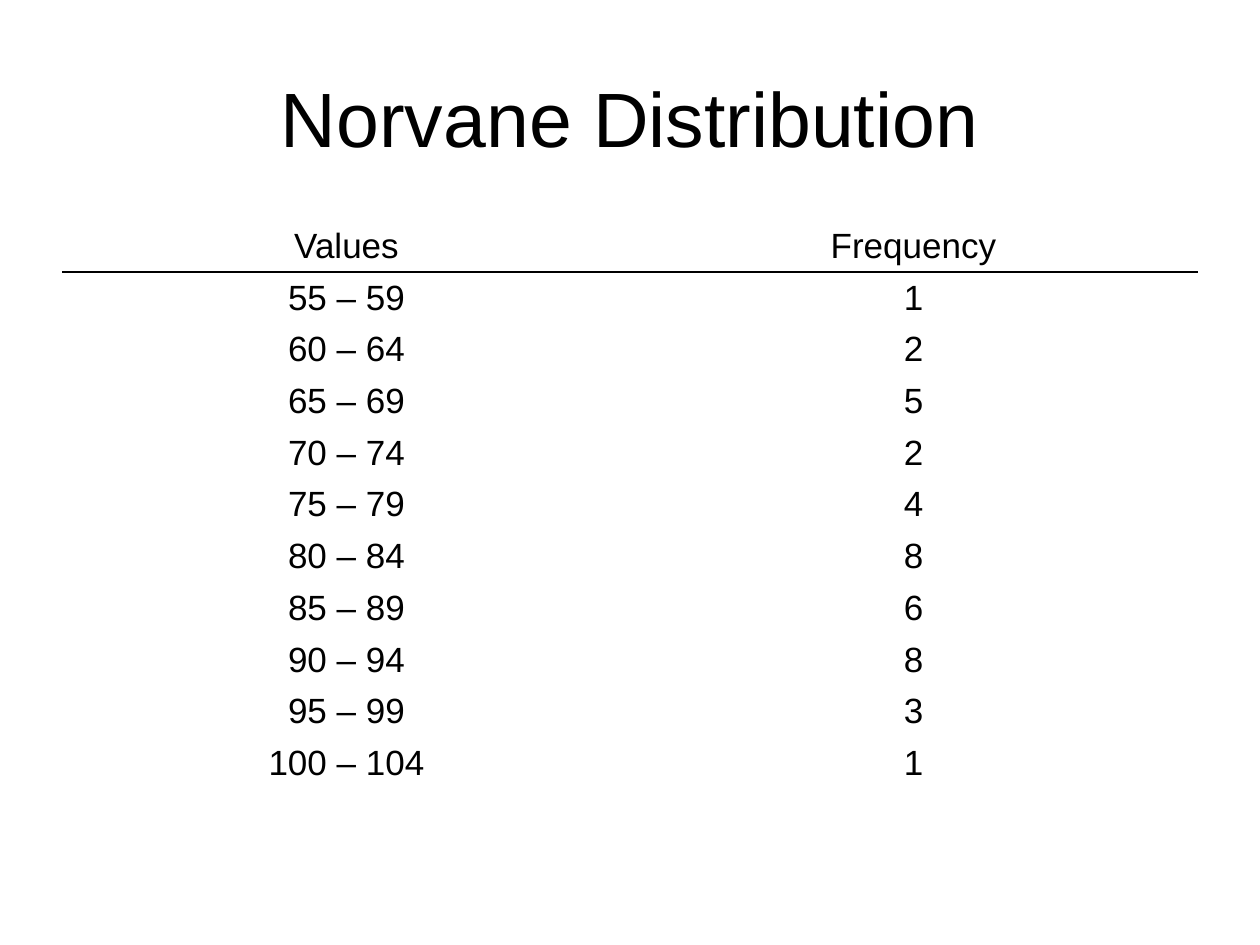
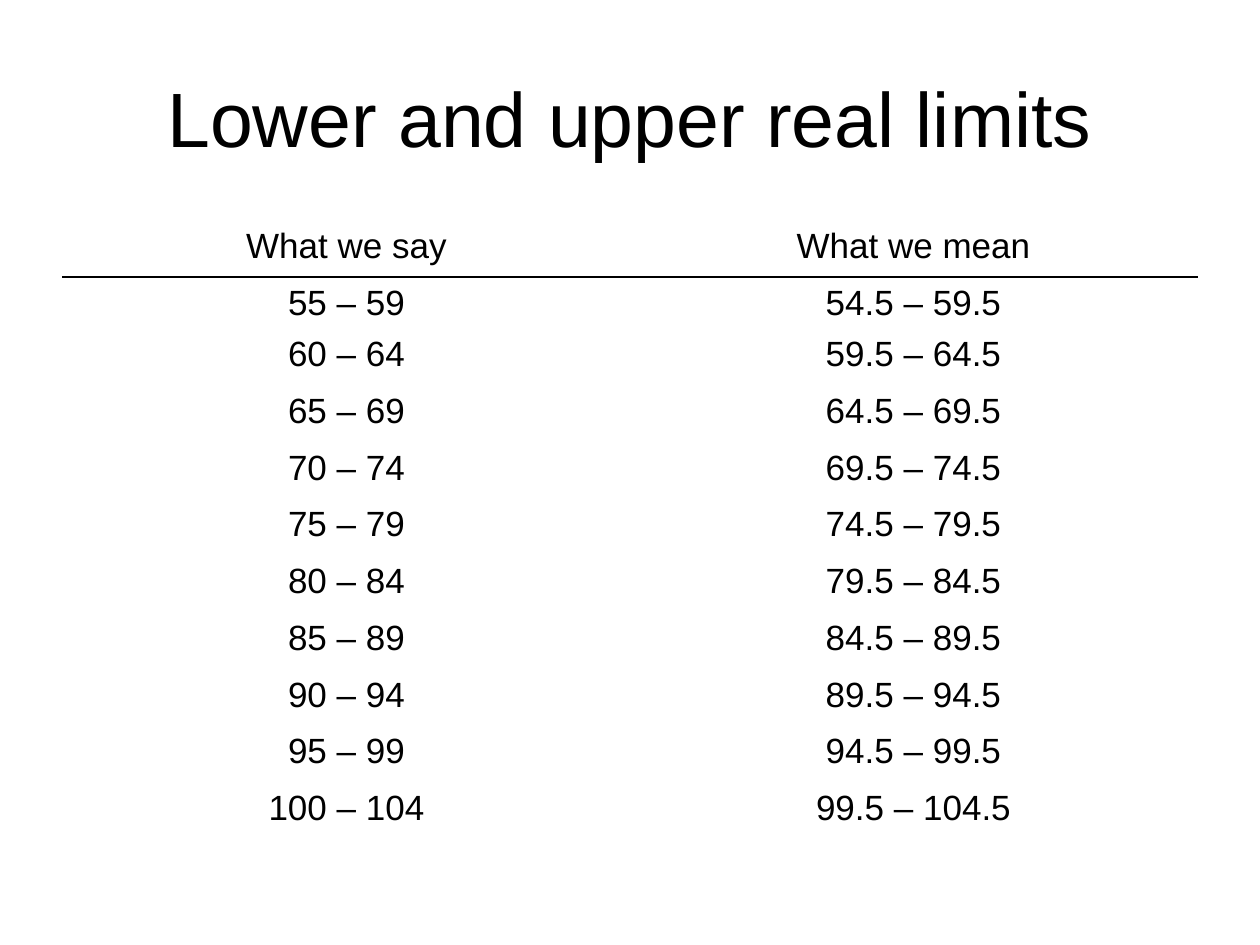
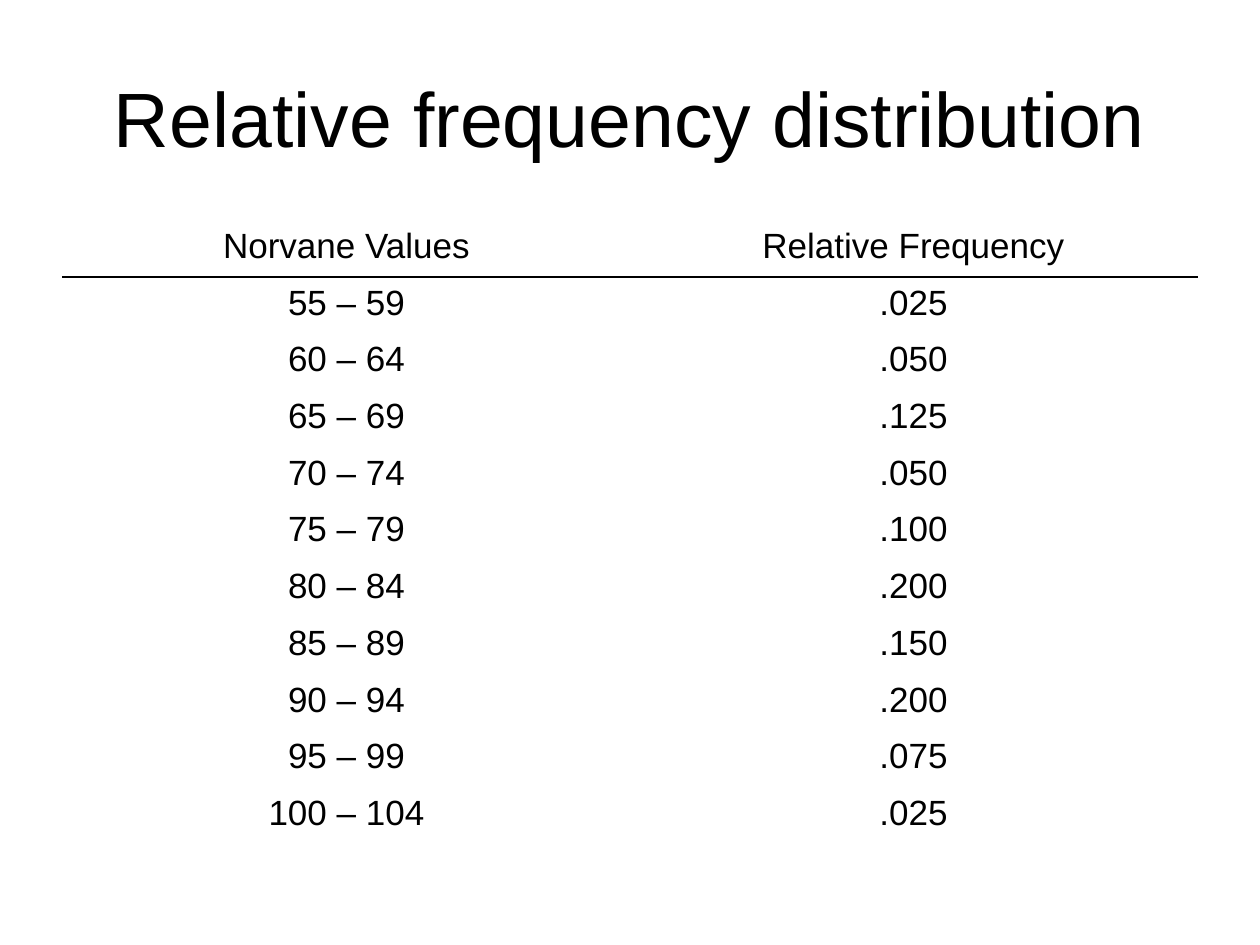
"""Build three slides of Norvane score distributions, each a title and a table."""
import pptx
import pptx.util
import pptx.dml.color
import pptx.enum.text
import pptx.oxml
import pptx.oxml.ns

Pt = pptx.util.Pt
BLACK = pptx.dml.color.RGBColor(0, 0, 0)
FONT = "Arial"
LEFT, WIDTH = 36, 648
TITLE_TOP, TITLE_HIGH = 21.6, 90
TABLE_TOP = 126
ROW, TALL, SHORT = 28.8, 32.4, 27.36
STEP = 5
LOWS = range(55, 105, STEP)
COUNTS = [1, 2, 5, 2, 4, 8, 6, 8, 3, 1]


def add_run(frame, text, size):
    """Write one centred run into the first paragraph of a text frame."""
    para = frame.paragraphs[0]
    para.alignment = pptx.enum.text.PP_ALIGN.CENTER
    run = para.add_run()
    run.text = text
    run.font.name = FONT
    run.font.size = Pt(size)
    run.font.bold = False
    run.font.color.rgb = BLACK


def add_title(slide, text):
    """Place and fill the title placeholder."""
    title = slide.shapes.title
    title.left, title.top = Pt(LEFT), Pt(TITLE_TOP)
    title.width, title.height = Pt(WIDTH), Pt(TITLE_HIGH)
    frame = title.text_frame
    frame.word_wrap = True
    frame.auto_size = pptx.enum.text.MSO_AUTO_SIZE.NONE
    frame.vertical_anchor = pptx.enum.text.MSO_ANCHOR.MIDDLE
    add_run(frame, text, 44)


def add_rule(cell, side):
    """Draw a black one-point border on one side of a cell."""
    line = pptx.oxml.parse_xml(
        f'<a:{side} {pptx.oxml.ns.nsdecls("a")} w="{Pt(1)}"><a:solidFill>'
        f'<a:srgbClr val="{BLACK}"/></a:solidFill></a:{side}>')
    cell._tc.get_or_add_tcPr().insert(0, line)


def add_grid(slide, rows, highs):
    """Add a plain two-column table with a rule under its header."""
    frame = slide.shapes.add_table(
        len(rows), 2, Pt(LEFT), Pt(TABLE_TOP), Pt(WIDTH), Pt(sum(highs)))
    table = frame.table
    table.first_row = table.horz_banding = False
    for r, (texts, high) in enumerate(zip(rows, highs)):
        table.rows[r].height = Pt(high)
        for c, text in enumerate(texts):
            cell = table.cell(r, c)
            cell.fill.background()
            add_run(cell.text_frame, text, 20)
            if r == 0:
                add_rule(cell, "lnB")
            elif r == 1:
                add_rule(cell, "lnT")


def main():
    """Build the deck and save it."""
    deck = pptx.Presentation()
    deck.slide_width, deck.slide_height = Pt(720), Pt(540)
    spans = [f"{low} – {low + STEP - 1}" for low in LOWS]
    limits = [f"{low - 0.5} – {low + STEP - 0.5}" for low in LOWS]
    shares = [f"{n / sum(COUNTS):.3f}".lstrip("0") for n in COUNTS]
    even = [TALL] * (len(spans) + 1)
    pages = [
        ("Norvane Distribution", ("Values", "Frequency"),
         map(str, COUNTS), [ROW] * len(even)),
        ("Lower and upper real limits", ("What we say", "What we mean"),
         limits, [TALL, SHORT] + even[2:]),
        ("Relative frequency distribution",
         ("Norvane Values", "Relative Frequency"), shares, even),
    ]
    for title, head, values, highs in pages:
        slide = deck.slides.add_slide(deck.slide_layouts[5])
        add_title(slide, title)
        add_grid(slide, [head, *zip(spans, values)], highs)
    deck.save("out.pptx")


if __name__ == "__main__":
    main()
